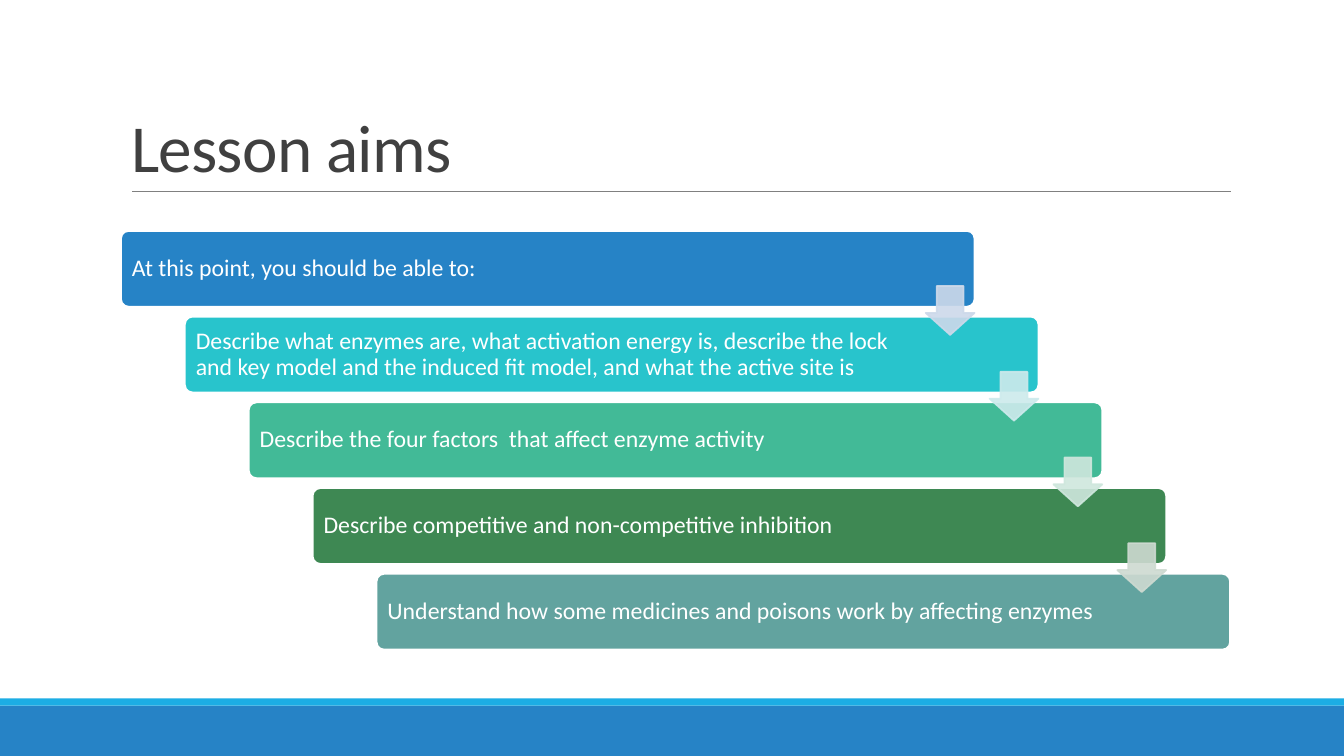
"""Builds the "Lesson aims" slide: a staircase of five bars joined by arrows."""
from lxml.etree import SubElement
from pptx import Presentation
from pptx.dml.color import RGBColor
from pptx.enum.shapes import MSO_CONNECTOR, MSO_SHAPE as SHAPE
from pptx.enum.text import MSO_ANCHOR as ANCHOR, MSO_AUTO_SIZE as AUTO_SIZE, PP_ALIGN as ALIGN
from pptx.oxml.ns import qn
from pptx.util import Cm, Pt


def colour(hex_code):
    return RGBColor.from_string(hex_code)


def add_block(preset, left, top, width, height, fill, outline=None):
    block = slide.shapes.add_shape(preset, Cm(left), Cm(top), Cm(width), Cm(height))
    block.shadow.inherit = False
    block.fill.solid()
    block.fill.fore_color.rgb = colour(fill)
    if outline:
        block.line.color.rgb = colour(outline)
        block.line.width = Pt(1.25)
    else:
        block.line.fill.background()
    return block


prs = Presentation()
prs.slide_width, prs.slide_height = Cm(33.87), Cm(19.05)
slide = prs.slides.add_slide(prs.slide_layouts[5])

add_block(SHAPE.RECTANGLE, 0, 17.78, 33.87, 1.27, "2683C6")
add_block(SHAPE.RECTANGLE, 0, 17.6, 33.87, 0.18, "1CADE4")

title_rule = slide.shapes.add_connector(
    MSO_CONNECTOR.STRAIGHT, Cm(3.33), Cm(4.82), Cm(31.01), Cm(4.82))
title_rule.line.color.rgb = colour("808080")
title_rule.line.width = Pt(0.5)
SubElement(title_rule._element.spPr, qn("a:effectLst"))

heading = slide.shapes.title
heading_box = {"left": Cm(3.05), "top": Cm(0.79), "width": Cm(27.94), "height": Cm(4.04)}
for key, value in heading_box.items():
    setattr(heading, key, value)
heading.text_frame.text = "Lesson aims"
heading.text_frame.auto_size = AUTO_SIZE.NONE
heading.text_frame.vertical_anchor = ANCHOR.BOTTOM
heading_line = heading.text_frame.paragraphs[0]
heading_line.alignment = ALIGN.LEFT
heading_line.line_spacing = 0.85
heading_run = heading_line.runs[0]
heading_run.font.color.rgb = colour("404040")
for key, value in {"name": "Calibri", "size": Pt(48)}.items():
    setattr(heading_run.font, key, value)
heading_run._r.get_or_add_rPr().set("spc", "-50")

aims = [
    ("At this point, you should be able to:", "2683C6"),
    ("Describe what enzymes are, what activation energy is, describe the lock and key model "
     "and the induced fit model, and what the active site is", "28C4CC"),
    ("Describe the four factors  that affect enzyme activity", "42BA97"),
    ("Describe competitive and non-competitive inhibition", "3E8853"),
    ("Understand how some medicines and poisons work by affecting enzymes", "62A39F"),
]
arrow_colours = ["CDD9EA", "CDEAEC", "CFE7DD", "CEDAD1"]
step_x, step_y = 1.61, 2.16

frame_format = {
    "word_wrap": True, "vertical_anchor": ANCHOR.MIDDLE,
    "margin_left": Cm(0.22), "margin_right": Cm(3.05),
    "margin_top": Cm(0.18), "margin_bottom": Cm(0.18),
}
aim_font = {"name": "Calibri", "size": Pt(17)}

for i, (aim, fill) in enumerate(aims):
    bar = add_block(SHAPE.ROUNDED_RECTANGLE, 3.05 + i * step_x, 5.82 + i * step_y,
                    21.51, 1.91, fill, "FFFFFF")
    bar.adjustments[0] = 0.1
    for key, value in frame_format.items():
        setattr(bar.text_frame, key, value)
    aim_line = bar.text_frame.paragraphs[0]
    aim_line.text = aim
    aim_line.alignment = ALIGN.LEFT
    aim_line.line_spacing = 0.9
    aim_line.font.color.rgb = colour("FFFFFF")
    for key, value in aim_font.items():
        setattr(aim_line.font, key, value)

for i, tint in enumerate(arrow_colours):
    arrow = add_block(SHAPE.DOWN_ARROW, 23.33 + i * step_x, 7.21 + i * step_y,
                      1.23, 1.23, tint, tint)
    arrow.adjustments[0] = 0.55
    arrow.adjustments[1] = 0.45
    for tint_element in arrow._element.spPr.iter(qn("a:srgbClr")):
        SubElement(tint_element, qn("a:alpha"), val="90000")

prs.save("out.pptx")
